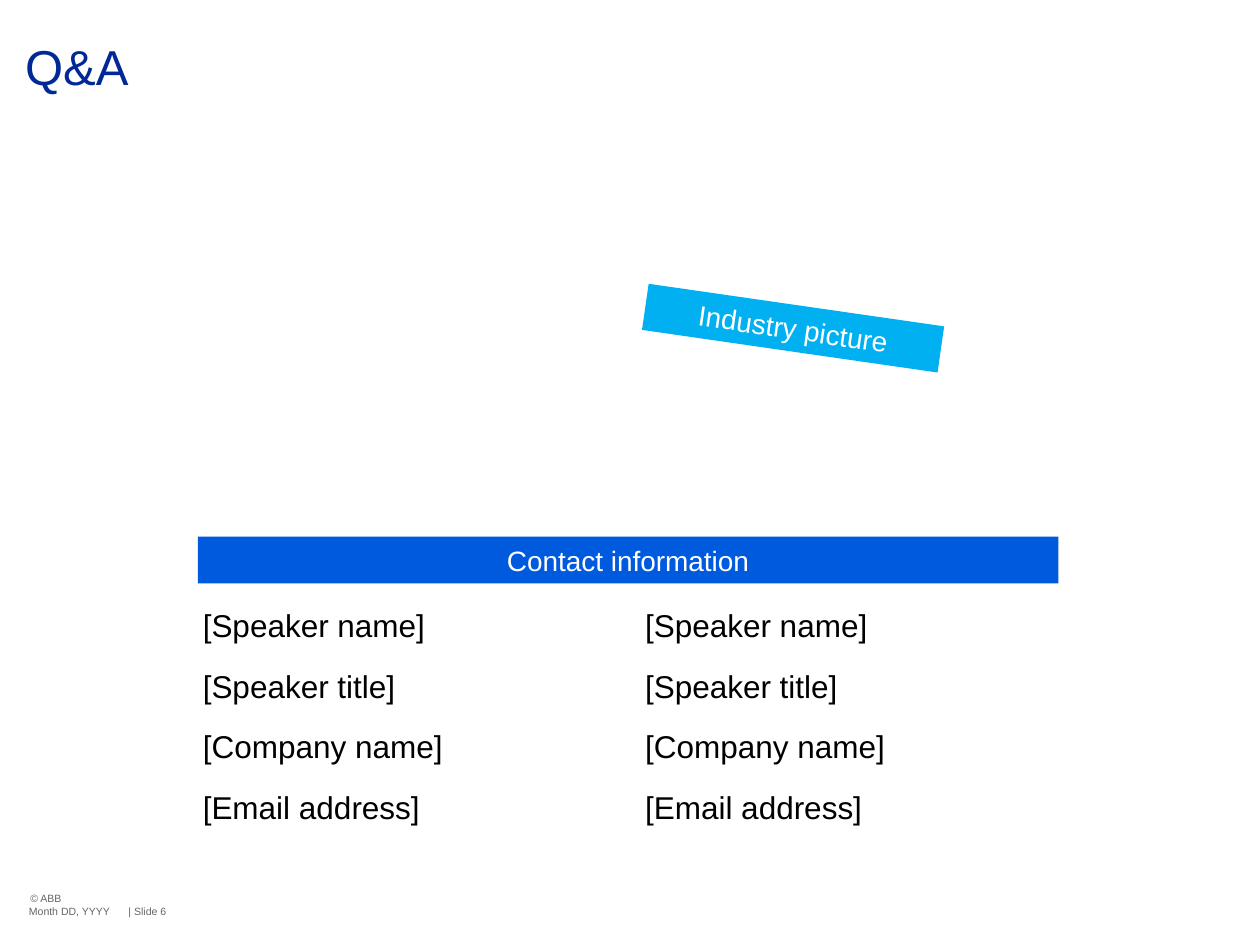
from pptx import Presentation
from pptx.dml.color import RGBColor
from pptx.enum.shapes import MSO_SHAPE
from pptx.enum.text import MSO_ANCHOR, PP_ALIGN
from pptx.util import Inches, Pt

NAVY = RGBColor(0x00, 0x28, 0x97)
BLUE = RGBColor(0x00, 0x5A, 0xDE)
CYAN = RGBColor(0x00, 0xB0, 0xF0)
GREY = RGBColor(0x66, 0x66, 0x66)
BLACK = RGBColor(0, 0, 0)
WHITE = RGBColor(0xFF, 0xFF, 0xFF)

DETAILS = ["[Speaker name]", "[Speaker title]", "[Company name]", "[Email address]"]


def set_pad(frame, left, top, right, bottom):
    frame.margin_left, frame.margin_top = Inches(left), Inches(top)
    frame.margin_right, frame.margin_bottom = Inches(right), Inches(bottom)


def style(frame, size, color, align=PP_ALIGN.LEFT):
    for par in frame.paragraphs:
        par.alignment = align
        for run in par.runs:
            run.font.name = "Arial"
            run.font.size = Pt(size)
            run.font.color.rgb = color


def place(shape, left, top, width, height):
    shape.left, shape.top = Inches(left), Inches(top)
    shape.width, shape.height = Inches(width), Inches(height)


def add_title(slide, text):
    title = slide.shapes.title
    place(title, 0, 0, 10, 1.74)
    frame = title.text_frame
    frame.text = text
    frame.word_wrap = True
    frame.vertical_anchor = MSO_ANCHOR.TOP
    set_pad(frame, 0.2, 0.34, 0.24, 0)
    frame.paragraphs[0].line_spacing = 0.9
    style(frame, 28, NAVY)


def add_text(slide, box, lines, size, color, wrap=True, gap=0):
    frame = slide.shapes.add_textbox(*map(Inches, box)).text_frame
    frame.text = "\n".join(lines)
    frame.word_wrap = wrap
    set_pad(frame, 0, 0, 0, 0)
    for index, par in enumerate(frame.paragraphs):
        par.space_before = Pt(gap if index else 0)
        par.space_after = Pt(gap)
    style(frame, size, color)
    return frame


def add_bar(slide, box, text, color, angle=0):
    bar = slide.shapes.add_shape(MSO_SHAPE.RECTANGLE, *map(Inches, box))
    bar.rotation = angle
    bar.shadow.inherit = False
    bar.fill.solid()
    bar.fill.fore_color.rgb = color
    bar.line.fill.background()
    frame = bar.text_frame
    frame.text = text
    frame.word_wrap = True
    frame.vertical_anchor = MSO_ANCHOR.MIDDLE
    set_pad(frame, 0.08, 0.08, 0.08, 0.08)
    style(frame, 16, WHITE, PP_ALIGN.CENTER)


def main():
    deck = Presentation()
    deck.slide_width, deck.slide_height = Inches(10), Inches(7.5)
    slide = deck.slides.add_slide(deck.slide_layouts[5])

    # Footer
    add_text(slide, (0.24, 7.08, 1.22, 0.1), ["© ABB"], 6, GREY, wrap=False)
    add_text(slide, (0.23, 7.18, 0.8, 0.11), ["Month DD, YYYY"], 6, GREY, wrap=False)
    number = add_text(slide, (1.02, 7.18, 0.53, 0.1), ["| Slide 6"], 6, GREY)
    number.vertical_anchor = MSO_ANCHOR.MIDDLE

    add_title(slide, "Q&A")

    # Speaker columns
    for left in (1.61, 5.12):
        add_text(slide, (left, 4.81, 3.27, 2.09), DETAILS, 18, BLACK, gap=6.5)

    # Labels
    add_bar(slide, (1.57, 4.26, 6.83, 0.37), "Contact information", BLUE)
    add_bar(slide, (5.11, 2.42, 2.37, 0.37), "Industry picture", CYAN, angle=8.2)

    deck.save("out.pptx")


if __name__ == "__main__":
    main()
